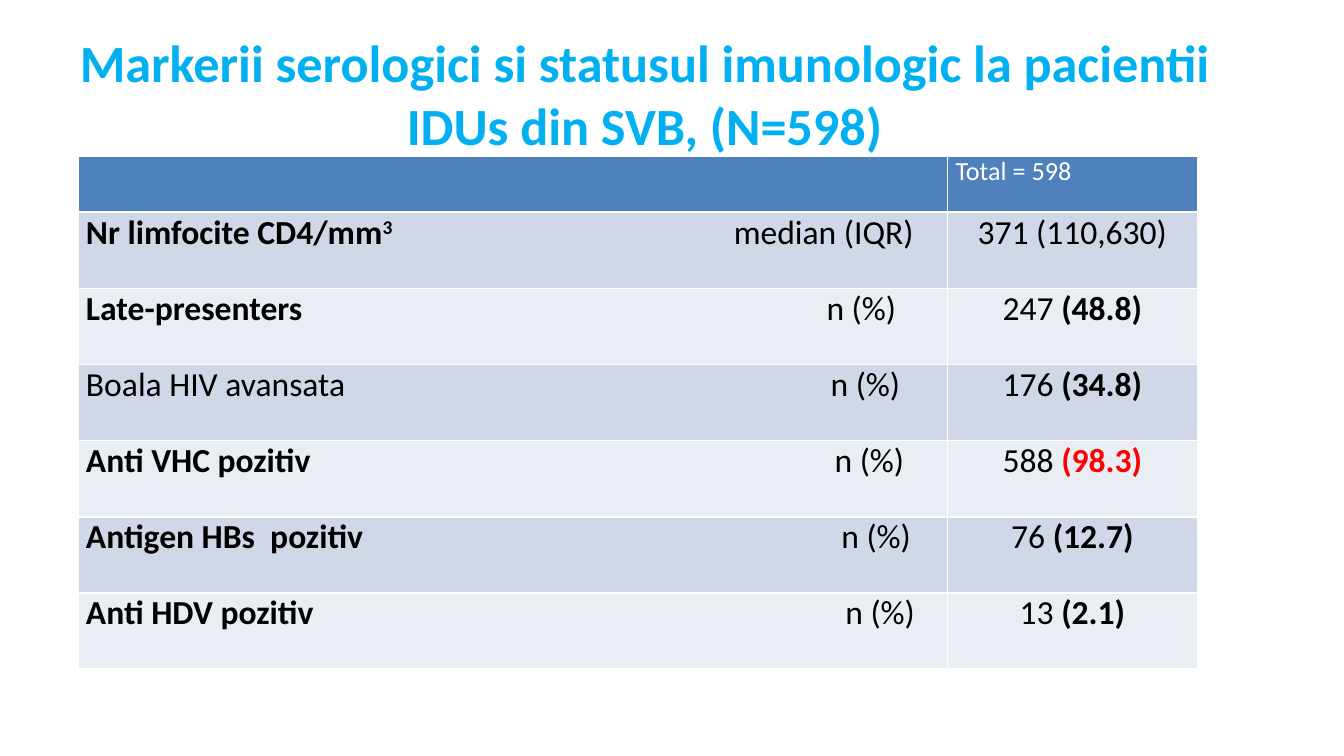
from dataclasses import dataclass

import lxml.etree
import pptx
import pptx.dml.color
import pptx.enum.text
import pptx.oxml.ns
import pptx.util

Inches, Pt = pptx.util.Inches, pptx.util.Pt
ALIGN = pptx.enum.text.PP_ALIGN
ANCHOR = pptx.enum.text.MSO_ANCHOR
qn = pptx.oxml.ns.qn

COLORS = {
    "title": "00B0F0",
    "header": "4F81BD",
    "band_dark": "D0D8E8",
    "band_light": "E9EDF4",
    "text": "000000",
    "alert": "FF0000",
    "white": "FFFFFF",
}
COL_WIDTHS = (6.47, 1.86)
TABLE_HEIGHT, HEADER_HEIGHT = 3.82, 0.42


@dataclass
class Marker:
    label: str
    unit_tab: float  # inches from the start of the cell text
    count: str
    percent: str = ""
    unit: str = "n (%)"
    superscript: str = ""
    bold: bool = True
    percent_color: str = "text"


MARKERS = [
    Marker("Nr limfocite CD4/mm", 4.82, "371 (110,630)",
           unit="median (IQR)", superscript="3"),
    Marker("Late-presenters", 5.51, "247 ", "(48.8)"),
    Marker("Boala HIV avansata", 5.54, "176 ", "(34.8)", bold=False),
    Marker("Anti VHC pozitiv", 5.57, "588 ", "(98.3)", percent_color="alert"),
    Marker("Antigen HBs  pozitiv", 5.62, "76 ", "(12.7)"),
    Marker("Anti HDV pozitiv", 5.65, "13 ", "(2.1)"),
]


def add_run(p, text: str, size: float, color: str, bold: bool = False):
    r = p.add_run()
    r.text = text
    r.font.name = "Calibri"
    r.font.size = Pt(size)
    r.font.bold = bold
    r.font.color.rgb = pptx.dml.color.RGBColor.from_string(COLORS[color])
    return r


def add_tab(p, position: float) -> None:
    tabs = lxml.etree.SubElement(p._p.get_or_add_pPr(), qn("a:tabLst"))
    lxml.etree.SubElement(tabs, qn("a:tab"), pos=str(Inches(position)), algn="l")


def style_cell(cell, fill: str) -> None:
    cell.margin_left = cell.margin_right = Inches(0.06)
    cell.margin_top = cell.margin_bottom = 0
    tc_pr = cell._tc.get_or_add_tcPr()
    for side in "LRTB":
        ln = lxml.etree.SubElement(tc_pr, qn(f"a:ln{side}"), w=str(Pt(1)))
        solid = lxml.etree.SubElement(ln, qn("a:solidFill"))
        lxml.etree.SubElement(solid, qn("a:srgbClr"), val=COLORS["white"])
    cell.fill.solid()
    cell.fill.fore_color.rgb = pptx.dml.color.RGBColor.from_string(COLORS[fill])


def fill_row(table, row: int, marker: Marker) -> None:
    name, value = table.cell(row, 0), table.cell(row, 1)
    for cell in (name, value):
        style_cell(cell, "band_dark" if row % 2 else "band_light")

    p = name.text_frame.paragraphs[0]
    add_tab(p, marker.unit_tab)
    p.alignment = ALIGN.JUSTIFY
    add_run(p, marker.label, 18, "text", marker.bold)
    if marker.superscript:
        r = add_run(p, marker.superscript, 18, "text", marker.bold)
        r.font._element.set("baseline", "30000")
    add_run(p, "\t" + marker.unit, 18, "text")

    p = value.text_frame.paragraphs[0]
    p.alignment = ALIGN.CENTER
    add_run(p, marker.count, 18, "text")
    if marker.percent:
        add_run(p, marker.percent, 18, marker.percent_color, True)


def add_title(s, text: str) -> None:
    sp = s.shapes.title
    sp.left, sp.top = Inches(0.17), Inches(0.23)
    sp.width, sp.height = Inches(9.25), Inches(0.93)
    tf = sp.text_frame
    tf.word_wrap = True
    tf.auto_size = pptx.enum.text.MSO_AUTO_SIZE.NONE
    tf.vertical_anchor = ANCHOR.MIDDLE
    p = tf.paragraphs[0]
    p.alignment = ALIGN.CENTER
    add_run(p, text, 28, "title", True)


def add_marker_table(s, markers: list[Marker]) -> None:
    row_height = (TABLE_HEIGHT - HEADER_HEIGHT) / len(markers)
    table = s.shapes.add_table(
        len(markers) + 1, len(COL_WIDTHS), Inches(0.58), Inches(1.16),
        Inches(sum(COL_WIDTHS)), Inches(TABLE_HEIGHT)).table
    for column, width in zip(table.columns, COL_WIDTHS):
        column.width = Inches(width)
    for i, row in enumerate(table.rows):
        row.height = Inches(row_height if i else HEADER_HEIGHT)

    # Header row
    for cell in table.rows[0].cells:
        style_cell(cell, "header")
    add_run(table.cell(0, 1).text_frame.paragraphs[0], "Total = 598", 14, "white")

    # One row per marker
    for i, marker in enumerate(markers, start=1):
        fill_row(table, i, marker)


def main() -> None:
    prs = pptx.Presentation()
    # Widescreen page, 16:9
    prs.slide_width = Inches(10)
    prs.slide_height = prs.slide_width * 9 // 16
    s = prs.slides.add_slide(prs.slide_layouts[5])
    add_title(s, "Markerii serologici si statusul imunologic la pacientii "
                 "IDUs din SVB, (N=598)")
    add_marker_table(s, MARKERS)
    prs.save("out.pptx")


if __name__ == "__main__":
    main()
